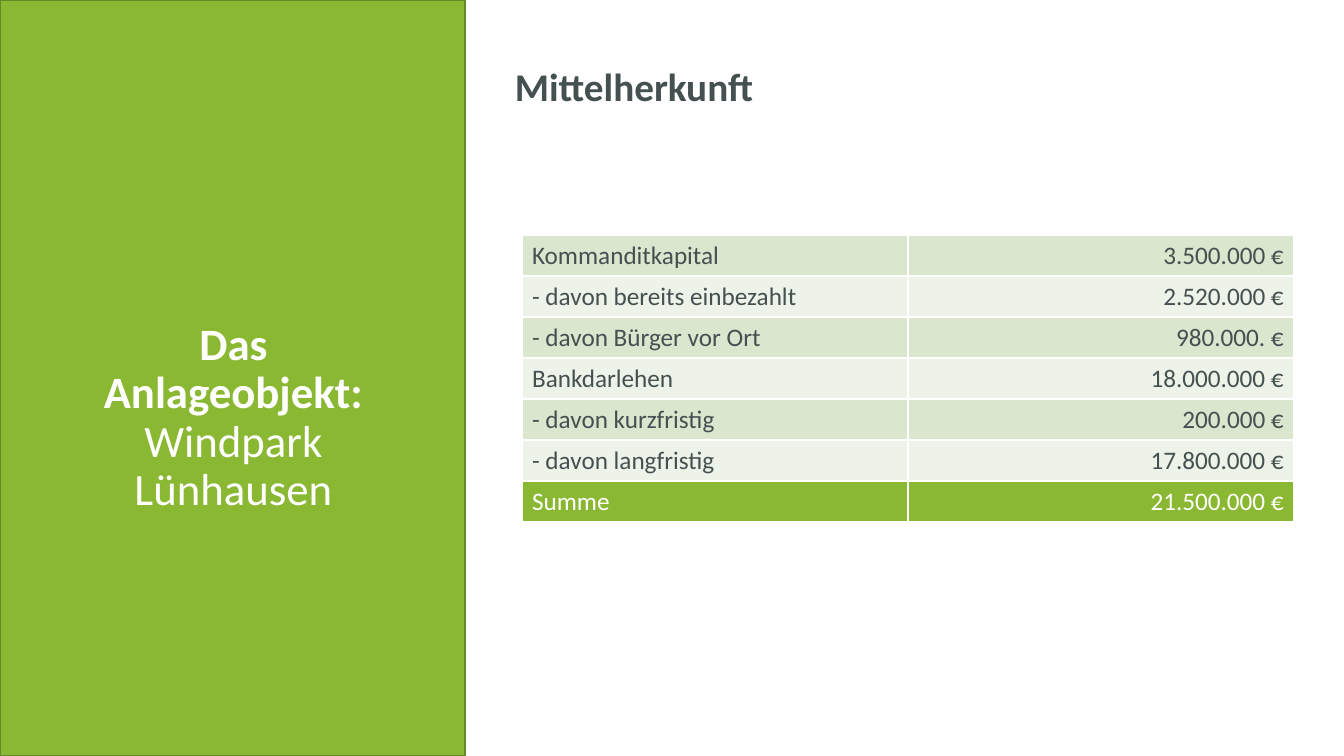
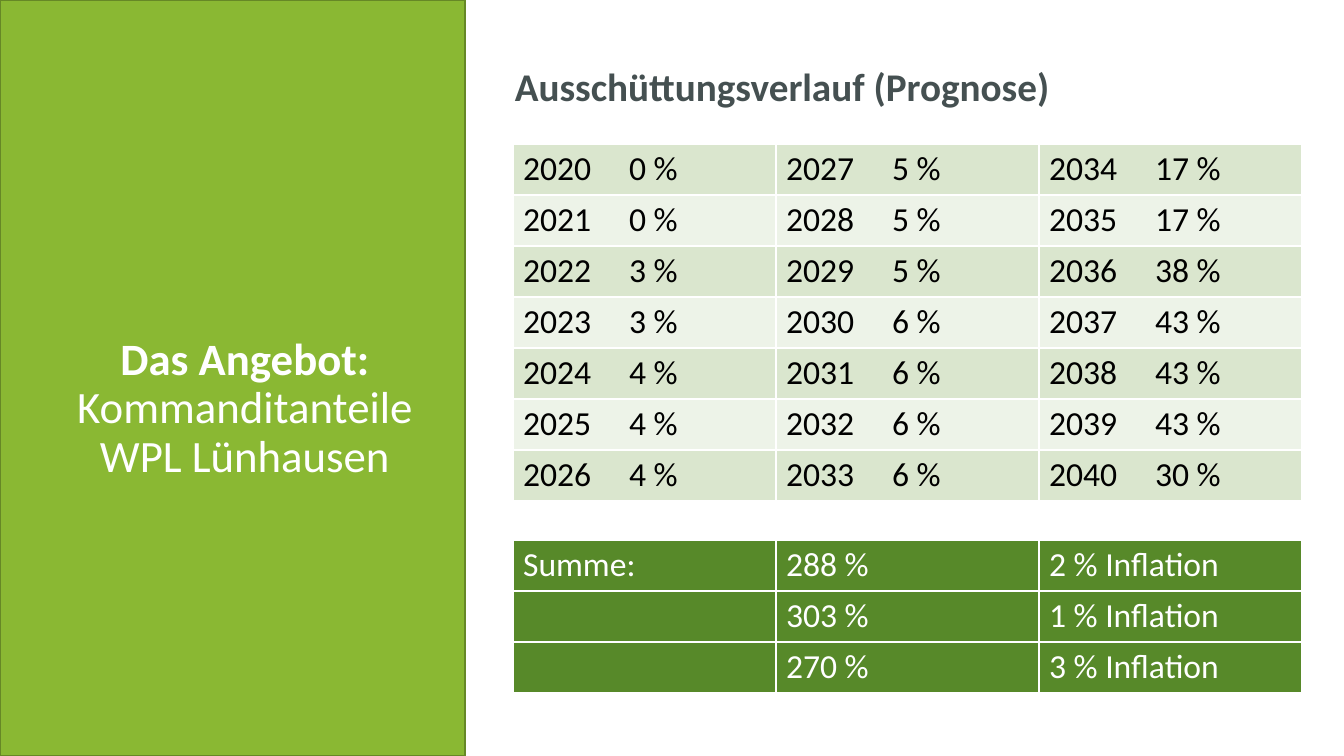
"""Builds two slides on the funding and payouts of a wind park."""
from lxml import etree
from pptx import Presentation
from pptx.dml.color import RGBColor
from pptx.enum.shapes import MSO_SHAPE
from pptx.enum.text import MSO_ANCHOR, MSO_AUTO_SIZE, PP_ALIGN
from pptx.oxml.ns import qn
from pptx.util import Emu, Pt

RECTANGLE = MSO_SHAPE.RECTANGLE
MIDDLE, TOP = MSO_ANCHOR.MIDDLE, MSO_ANCHOR.TOP
NO_AUTOFIT = MSO_AUTO_SIZE.NONE
LEFT, CENTER, RIGHT = PP_ALIGN.LEFT, PP_ALIGN.CENTER, PP_ALIGN.RIGHT

SLIDE_WIDTH, SLIDE_HEIGHT = 1344, 756
EMU_PER_PX = 12192000 / SLIDE_WIDTH
TITLE_ONLY = 5


def px(length):
    """Turn px into EMU."""
    return Emu(round(length * EMU_PER_PX))


def color(code):
    """Turn a hex string into a colour."""
    return RGBColor.from_string(code)


class Pages:
    """Holds the deck, its style and the current slide."""

    FONT = "Calibri"
    GREEN, DARK_GREEN, OUTLINE = "8AB833", "578929", "668826"
    BANDS = ("DAE6CE", "EDF3E8")
    TEXT, BLACK, WHITE = "455051", "000000", "FFFFFF"

    def __init__(self):
        """Start an empty widescreen deck."""
        self.deck = Presentation()
        self.deck.slide_width = px(SLIDE_WIDTH)
        self.deck.slide_height = px(SLIDE_HEIGHT)
        self.page = None

    def add_page(self, title_box, title_spans, heading):
        """Add a slide with its side panel, title and heading."""
        layout = self.deck.slide_layouts[TITLE_ONLY]
        self.page = self.deck.slides.add_slide(layout)
        self.add_panel()
        self.set_title(title_box, title_spans)
        self.add_heading(heading)

    def add_panel(self):
        """Draw the green side panel behind the title."""
        panel = self.page.shapes.add_shape(
            RECTANGLE, 0, 0, px(465), px(SLIDE_HEIGHT))
        panel.shadow.inherit = False
        panel.fill.solid()
        panel.fill.fore_color.rgb = color(self.GREEN)
        panel.line.color.rgb = color(self.OUTLINE)
        panel.line.width = Pt(1)
        self.page.shapes.element.insert(2, panel.element)

    def set_title(self, box, spans):
        """Place the title; a newline among the spans breaks the line."""
        title = self.page.shapes.title
        title.left, title.top, title.width, title.height = map(px, box)
        para = self.prepare(title.text_frame, MIDDLE, CENTER)
        para.line_spacing = 0.9
        for text, bold in spans:
            if text == "\n":
                para.add_line_break()
            else:
                self.add_span(para, text, 32, self.WHITE, bold)

    def add_heading(self, text):
        """Write the heading to the right of the panel."""
        box = self.page.shapes.add_textbox(px(505), px(63), px(805), px(52))
        para = self.prepare(box.text_frame, TOP, LEFT)
        para.line_spacing = 0.9
        para.space_before = Pt(10)
        self.add_span(para, text, 28, self.TEXT, True)

    def prepare(self, frame, anchor, align):
        """Set up a text frame and return its first paragraph."""
        frame.word_wrap = True
        frame.auto_size = NO_AUTOFIT
        frame.vertical_anchor = anchor
        para = frame.paragraphs[0]
        para.alignment = align
        return para

    def add_span(self, para, text, size, ink, bold=False):
        """Add one formatted run."""
        span = para.add_run()
        span.text = text
        span.font.name = self.FONT
        span.font.size = Pt(size)
        span.font.bold = bold
        span.font.color.rgb = color(ink)

    def add_table(self, left, top, column_width, heights, rows, size, aligns):
        """Add a table from rows of (texts, fill, ink)."""
        columns = len(aligns)
        table = self.page.shapes.add_table(
            len(rows), columns, px(left), px(top),
            px(column_width * columns), px(sum(heights))).table
        table.first_row = table.horz_banding = False
        for column in table.columns:
            column.width = px(column_width)
        for number, (texts, fill, ink) in enumerate(rows):
            table.rows[number].height = px(heights[number])
            for index, text in enumerate(texts):
                cell = table.cell(number, index)
                self.format_cell(cell, fill)
                para = cell.text_frame.paragraphs[0]
                para.alignment = aligns[index]
                if "\t" in text:
                    self.add_tab_stop(para, 106)
                if text:
                    self.add_span(para, text, size, ink)

    def format_cell(self, cell, fill):
        """Give a cell white borders, margins and its fill."""
        cell.vertical_anchor = MIDDLE
        cell.margin_top = cell.margin_bottom = px(4)
        properties = cell._tc.get_or_add_tcPr()
        for side in ("a:lnL", "a:lnR", "a:lnT", "a:lnB"):
            border = etree.SubElement(properties, qn(side), w=str(Pt(1)))
            paint = etree.SubElement(border, qn("a:solidFill"))
            etree.SubElement(paint, qn("a:srgbClr"), val=self.WHITE)
        if fill:
            cell.fill.solid()
            cell.fill.fore_color.rgb = color(fill)
        else:
            cell.fill.background()

    def add_tab_stop(self, para, position):
        """Add a left tab stop to a paragraph."""
        properties = para._p.get_or_add_pPr()
        stops = etree.SubElement(properties, qn("a:tabLst"))
        etree.SubElement(stops, qn("a:tab"), pos=str(px(position)), algn="l")

    def band(self, rows, ink):
        """Pair rows of text with alternating fills."""
        return [(texts, self.BANDS[number % 2], ink)
                for number, texts in enumerate(rows)]


def add_funding(pages):
    """Build the slide on the source of funds."""
    pages.add_page(
        (57, 268, 353, 301),
        [("Das Anlageobjekt: ", True), ("Windpark Lünhausen", False)],
        "Mittelherkunft")
    funds = [
        ("Kommanditkapital", "3.500.000 €"),
        ("- davon bereits einbezahlt", "2.520.000 €"),
        ("- davon Bürger vor Ort", "980.000. €"),
        ("Bankdarlehen", "18.000.000 €"),
        ("- davon kurzfristig", "200.000 €"),
        ("- davon langfristig", "17.800.000 €"),
    ]
    total = (("Summe", "21.500.000 €"), pages.GREEN, pages.WHITE)
    rows = pages.band(funds, pages.TEXT) + [total]
    pages.add_table(522, 235, 386, [41] * len(rows), rows, 18, (LEFT, RIGHT))


def add_payouts(pages):
    """Build the slide on the forecast payouts."""
    pages.add_page(
        (49, 259, 392, 301),
        [("Das Angebot:", True), ("\n", True),
         ("Kommanditanteile WPL Lünhausen", False)],
        "Ausschüttungsverlauf (Prognose)")
    first_year, years_per_column = 2020, 7
    payouts = [0, 0, 3, 3, 4, 4, 4,
               5, 5, 5, 6, 6, 6, 6,
               17, 17, 38, 43, 43, 43, 30]
    labels = [f"{first_year + index}\t{payout} %"
              for index, payout in enumerate(payouts)]
    years = [labels[start::years_per_column]
             for start in range(years_per_column)]
    totals = [("Summe:", "288 %", "2 % Inflation"),
              ("", "303 %", "1 % Inflation"),
              ("", "270 %", "3 % Inflation")]
    gap = (("", "", ""), None, pages.BLACK)
    rows = pages.band(years, pages.BLACK) + [gap]
    rows += [(texts, pages.DARK_GREEN, pages.WHITE) for texts in totals]
    heights = [51] * len(years) + [39] + [51] * len(totals)
    pages.add_table(513, 144, 263, heights, rows, 24, (LEFT, LEFT, LEFT))


def main():
    """Build and save the deck."""
    pages = Pages()
    add_funding(pages)
    add_payouts(pages)
    pages.deck.save("out.pptx")


if __name__ == "__main__":
    main()
